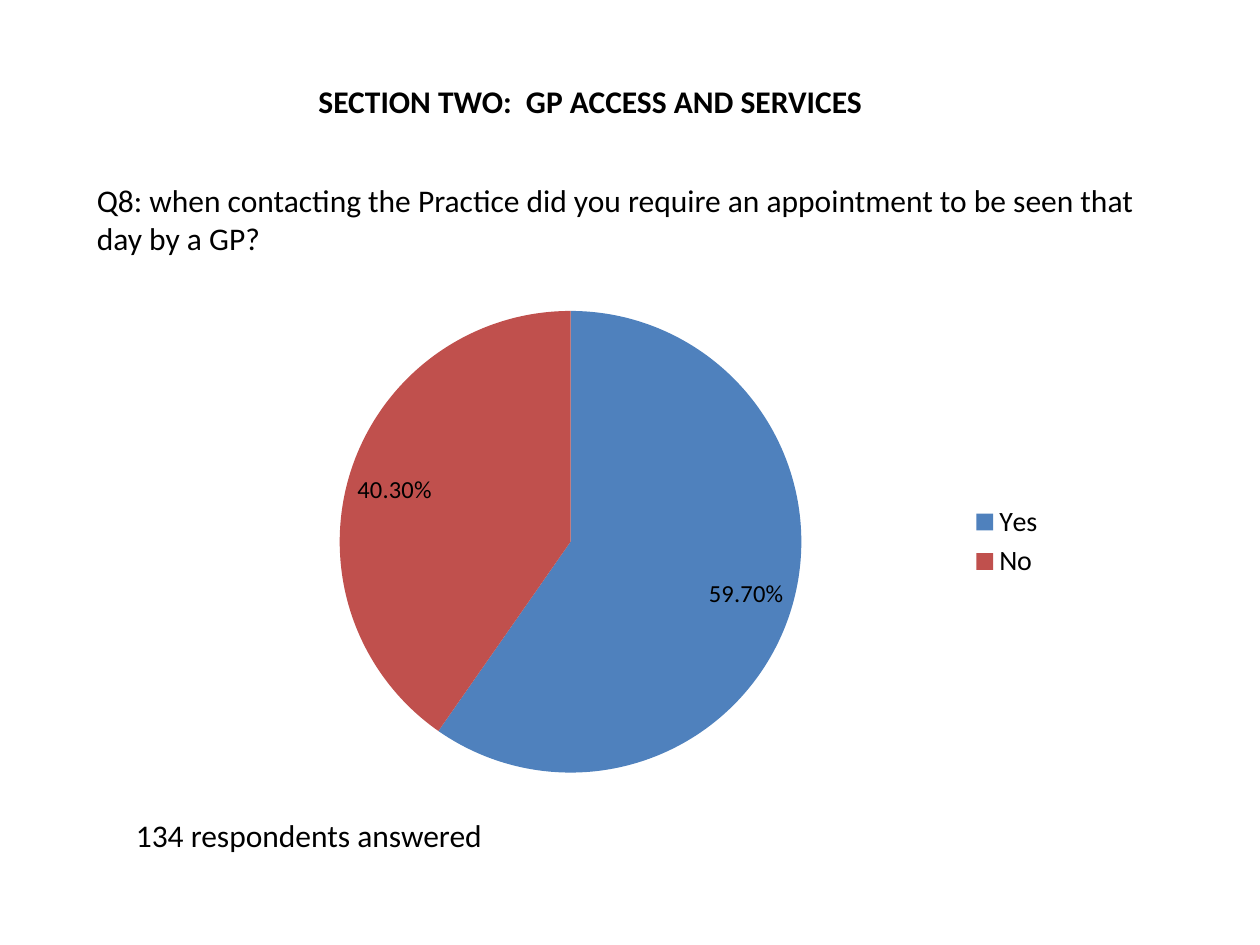
from dataclasses import dataclass

from pptx import Presentation
from pptx.chart.data import CategoryChartData
from pptx.dml.color import RGBColor
from pptx.enum.chart import XL_CHART_TYPE, XL_LABEL_POSITION as LabelPos, XL_LEGEND_POSITION as LegendPos
from pptx.enum.text import MSO_ANCHOR, MSO_AUTO_SIZE, PP_ALIGN
from pptx.util import Inches, Pt


@dataclass(frozen=True)
class Theme:
    font: str = "Calibri"
    ink: RGBColor = RGBColor(0, 0, 0)
    yes: RGBColor = RGBColor(0x4F, 0x81, 0xBD)
    no: RGBColor = RGBColor(0xC0, 0x50, 0x4D)
    text: Pt = Pt(18)
    legend: Pt = Pt(16)
    label: Pt = Pt(14)


THEME = Theme()


def style_font(font, size, bold=False):
    font.name = THEME.font
    font.size = size
    font.bold = bold
    font.color.rgb = THEME.ink


def fill_text(sp, text, align=PP_ALIGN.LEFT, bold=False):
    tf = sp.text_frame
    tf.text = text
    tf.word_wrap = True
    tf.auto_size = MSO_AUTO_SIZE.SHAPE_TO_FIT_TEXT
    tf.vertical_anchor = MSO_ANCHOR.TOP
    p = tf.paragraphs[0]
    p.alignment = align
    style_font(p.font, THEME.text, bold)


def add_title(s, text, left, top, width, height):
    sp = s.shapes.title
    sp.left, sp.top = Inches(left), Inches(top)
    sp.width, sp.height = Inches(width), Inches(height)
    fill_text(sp, text, PP_ALIGN.CENTER, bold=True)


def add_text(s, text, left, top, width, height):
    sp = s.shapes.add_textbox(Inches(left), Inches(top), Inches(width), Inches(height))
    fill_text(sp, text)


def add_pie(s, answers, left, top, width, height):
    """Draw a pie from (category, share, colour) rows."""
    data = CategoryChartData(number_format="0.00%")
    data.categories = [name for name, _, _ in answers]
    data.add_series("Series 1", [share for _, share, _ in answers])
    chart = s.shapes.add_chart(XL_CHART_TYPE.PIE, Inches(left), Inches(top),
                               Inches(width), Inches(height), data).chart
    chart.has_title = False
    chart.has_legend = True
    chart.legend.position = LegendPos.RIGHT
    chart.legend.include_in_layout = False
    style_font(chart.legend.font, THEME.legend)

    plot = chart.plots[0]
    plot.vary_by_categories = True
    for i, (_, _, colour) in enumerate(answers):
        fill = plot.series[0].points[i].format.fill
        fill.solid()
        fill.fore_color.rgb = colour

    labels = plot.series[0].data_labels
    labels.show_value = True
    labels.number_format = "0.00%"
    labels.number_format_is_linked = False
    labels.position = LabelPos.INSIDE_END
    style_font(labels.font, THEME.label)


def main():
    prs = Presentation()
    prs.slide_width, prs.slide_height = Inches(10), Inches(7.5)
    s = prs.slides.add_slide(prs.slide_layouts.get_by_name("Title Only"))

    add_title(s, "SECTION TWO:  GP ACCESS AND SERVICES", 1.14, 0.6, 7.09, 0.4)
    add_text(s, "Q8: when contacting the Practice did you require an appointment "
                "to be seen that day by a GP?", 0.67, 1.39, 8.82, 0.71)
    add_pie(s, [("Yes", 0.597, THEME.yes), ("No", 0.403, THEME.no)],
            1.38, 2.33, 7.01, 3.94)
    add_text(s, "134 respondents answered", 0.98, 6.43, 7.64, 0.4)

    prs.save("out.pptx")


if __name__ == "__main__":
    main()
